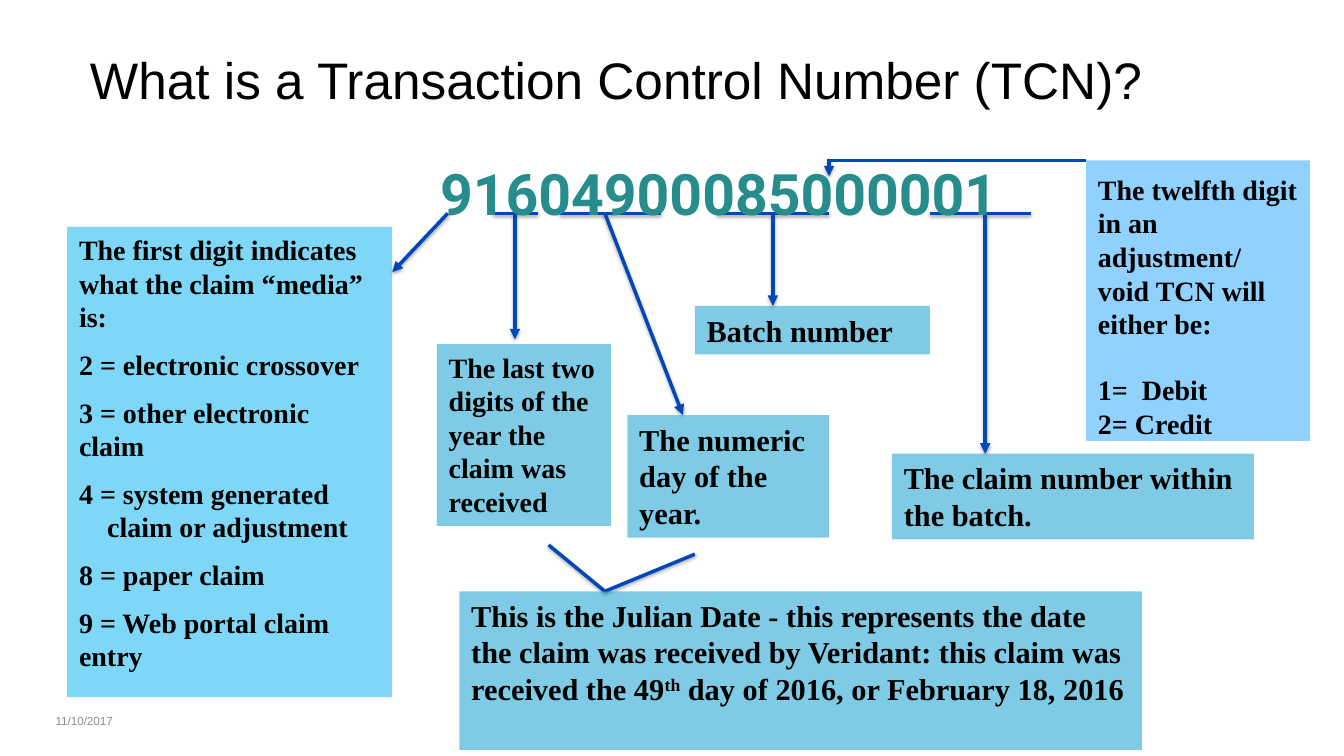
from lxml import etree
from pptx import Presentation
from pptx.dml.color import RGBColor
from pptx.enum.shapes import MSO_CONNECTOR, MSO_SHAPE
from pptx.enum.text import MSO_ANCHOR, MSO_AUTO_SIZE, PP_ALIGN
from pptx.oxml.ns import qn
from pptx.util import Cm, Pt

STRAIGHT = MSO_CONNECTOR.STRAIGHT
RECTANGLE = MSO_SHAPE.RECTANGLE
TOP, MIDDLE = MSO_ANCHOR.TOP, MSO_ANCHOR.MIDDLE
LEFT = PP_ALIGN.LEFT
NO_RESIZE = MSO_AUTO_SIZE.NONE

BLACK = RGBColor(0x00, 0x00, 0x00)
LINE_BLUE = RGBColor(0x00, 0x47, 0xBA)
SKY = RGBColor(0x00, 0xB0, 0xF0)
TEAL_BLUE = RGBColor(0x00, 0x99, 0xCC)
PALE_BLUE = RGBColor(0x90, 0xD1, 0xFE)
NUMBER_GREEN = RGBColor(0x27, 0x8D, 0x8C)
DATE_GREY = RGBColor(0x8C, 0x8C, 0x8C)

SERIF = "Times New Roman"
UNDERLINE_Y = 6.45
HANGING = 0.85

MEDIA_TEXT = [
    "The first digit indicates what the claim “media” is:",
    "2 = electronic crossover",
    "3 = other electronic claim",
    "4 = system generated\vclaim or adjustment",
    "8 = paper claim",
    "9 = Web portal claim entry",
]
JULIAN_PARTS = [
    "This is the Julian Date - this represents the date the claim was "
    "received by Veridant: this claim was received the 49",
    "th",
    " day of 2016, or February 18, 2016",
]

# Text, size, box, (pointer start x, tip offset in box), underline x range
DIGIT_CALLOUTS = [
    ("The last two digits of the year the claim was received", 24,
     (13.21, 10.41, 5.26, 5.49), (15.57, 2.36, -0.15), (14.91, 16.26)),
    ("The numeric day of the year.", 26,
     (18.97, 12.55, 6.1, 3.71), (18.29, 1.68, 0), (16.94, 19.99)),
    ("Batch number", 26,
     (21.01, 9.25, 7.11, 1.47), (23.37, 2.36, 0), (21.67, 25.07)),
    ("The claim number within the batch.", 26,
     (26.97, 13.72, 10.95, 2.59), (29.79, 2.82, 0), (28.12, 31.17)),
]


def add_line(page, start, end, arrow=False, width=3, shadow=True):
    line = page.shapes.add_connector(STRAIGHT, *map(Cm, start + end))
    line.line.color.rgb = LINE_BLUE
    line.line.width = Pt(width)
    properties = line._element.spPr
    if arrow:
        outline = properties.find(qn("a:ln"))
        etree.SubElement(outline, qn("a:tailEnd"), type="triangle")
    effects = etree.SubElement(properties, qn("a:effectLst"))
    if shadow:
        outer = etree.SubElement(
            effects, qn("a:outerShdw"), blurRad=str(Pt(3.1)),
            dist=str(Pt(1.8)), dir="5400000", rotWithShape="0")
        black = etree.SubElement(outer, qn("a:srgbClr"), val="000000")
        etree.SubElement(black, qn("a:alpha"), val="35000")


def format_frame(shape, anchor=TOP, inset_y=0.18):
    frame = shape.text_frame
    frame.word_wrap = True
    frame.auto_size = NO_RESIZE
    frame.vertical_anchor = anchor
    frame.margin_left = frame.margin_right = Cm(0.36)
    frame.margin_top = frame.margin_bottom = Cm(inset_y)
    return frame


def format_text(frame, name, size, color, bold=False):
    for para in frame.paragraphs:
        para.alignment = LEFT
        for span in para.runs:
            span.font.name = name
            span.font.size = Pt(size)
            span.font.bold = bold
            span.font.color.rgb = color


def add_panel(page, box, text, size, fill, opacity=50, inset_y=0.18):
    panel = page.shapes.add_shape(RECTANGLE, *map(Cm, box))
    panel.shadow.inherit = False
    panel.line.fill.background()
    panel.fill.solid()
    panel.fill.fore_color.rgb = fill
    if opacity < 100:
        color = panel._element.spPr.find(qn("a:solidFill"))[0]
        etree.SubElement(color, qn("a:alpha"), val=str(opacity * 1000))
    frame = format_frame(panel, inset_y=inset_y)
    frame.text = text
    format_text(frame, SERIF, size, BLACK, True)
    return frame


def add_text(page, box, text, name, size, color, bold=False, anchor=TOP):
    frame = format_frame(page.shapes.add_textbox(*map(Cm, box)), anchor)
    frame.text = text
    format_text(frame, name, size, color, bold)


def add_title(page, box):
    title = page.shapes.title
    title.left, title.top, title.width, title.height = map(Cm, box)
    frame = format_frame(title)
    frame.text = "What is a Transaction Control Number (TCN)?"
    format_text(frame, "Arial", 44, BLACK)


def add_media_panel(page, box):
    left, top, width, height = box
    add_line(page, (13.54, UNDERLINE_Y), (left + width, top + 1.37), True)
    frame = add_panel(page, box, "\n".join(MEDIA_TEXT), 24, SKY)
    for para in frame.paragraphs[1:]:
        para.space_before = Pt(12)
        if "\v" in para.text:
            properties = para._p.get_or_add_pPr()
            properties.set("marL", str(Cm(HANGING)))
            properties.set("indent", str(Cm(-HANGING)))


def add_digit_callout(page, text, size, box, pointer, underline):
    """Underline some digits and point from them to their explanation."""
    left, top = box[:2]
    start_x, tip_x, tip_y = pointer
    first_x, last_x = underline
    add_line(page, (first_x, UNDERLINE_Y), (last_x, UNDERLINE_Y))
    add_line(page, (start_x, UNDERLINE_Y), (left + tip_x, top + tip_y), True)
    add_panel(page, box, text, size, TEAL_BLUE)


def add_julian_panel(page, box):
    left, top = box[:2]
    meeting = (left + 4.4, top)
    for start in ((left + 2.7, top - 1.4), (left + 7.12, top - 1.12)):
        add_line(page, start, meeting)
    frame = add_panel(page, box, "", 26, TEAL_BLUE)
    for part in JULIAN_PARTS:
        span = frame.paragraphs[0].add_run()
        span.text = part
        if part == "th":
            span._r.get_or_add_rPr().set("baseline", "30000")
    format_text(frame, SERIF, 26, BLACK, True)


def add_twelfth_digit_panel(page, box):
    left, top = box[:2]
    digit_x = left - 7.77
    text = ("The twelfth digit in an adjustment/ void TCN will either be:\n"
            "1=  Debit\n2= Credit")
    frame = add_panel(page, box, text, 24, PALE_BLUE, 100, 0.36)
    frame.paragraphs[1].space_before = Pt(28)
    add_line(page, (digit_x, top), (left, top), width=2.5, shadow=False)
    add_line(page, (digit_x, top - 0.05), (digit_x, top + 0.48), True)


def main():
    deck = Presentation()
    deck.slide_width, deck.slide_height = Cm(40.64), Cm(22.86)
    page = deck.slides.add_slide(deck.slide_layouts.get_by_name("Title Only"))
    add_title(page, (2.36, 1.27, 33.86, 2.24))
    add_media_panel(page, (2.03, 6.86, 9.83, 14.22))
    for callout in DIGIT_CALLOUTS:
        add_digit_callout(page, *callout)
    add_julian_panel(page, (13.89, 17.88, 20.65, 4.8))
    add_text(page, (12.95, 4.62, 18.22, 2.46), "91604900085000001",
             "Roboto", 49, NUMBER_GREEN, True)
    add_twelfth_digit_panel(page, (32.84, 4.85, 6.78, 8.48))
    add_text(page, (1.32, 21.18, 3.84, 1.22), "11/10/2017",
             "Arial", 10, DATE_GREY, anchor=MIDDLE)
    deck.save("out.pptx")


if __name__ == "__main__":
    main()
